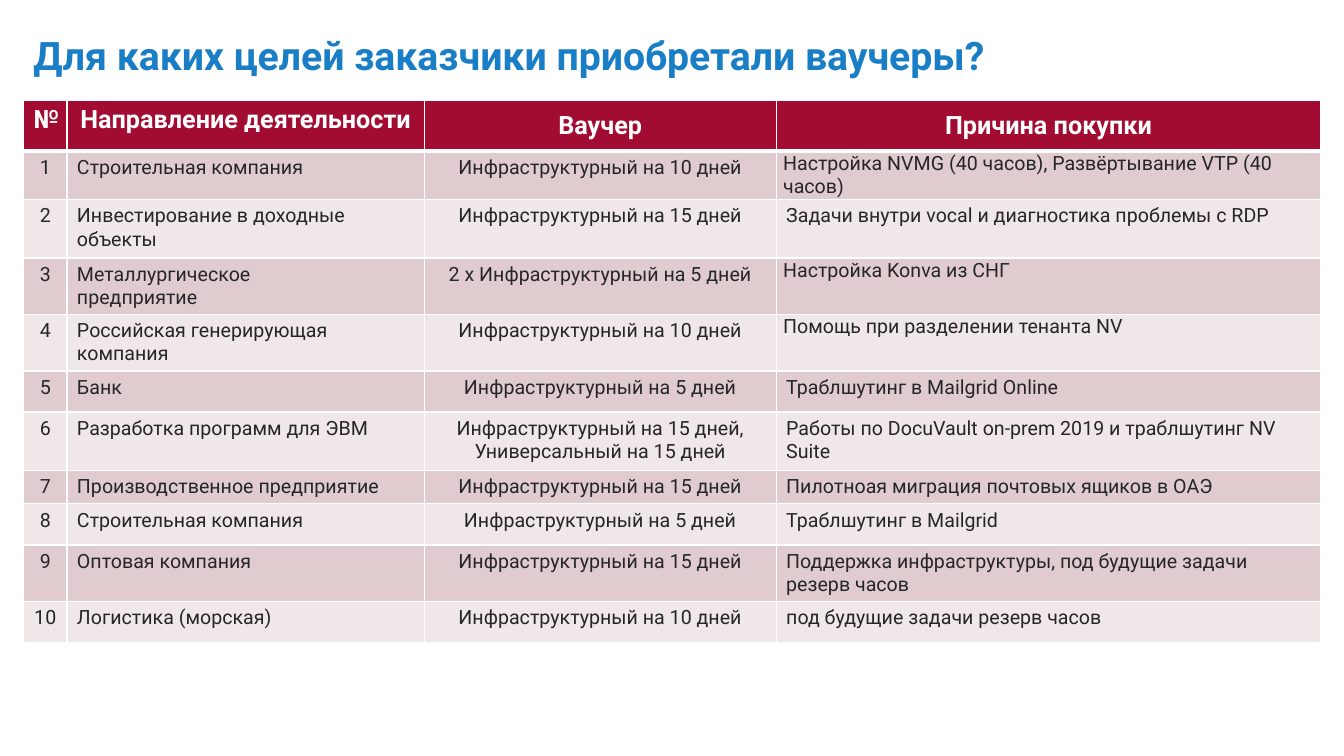
from dataclasses import dataclass

from lxml.etree import SubElement
from pptx import Presentation
from pptx.dml.color import RGBColor as Rgb
from pptx.enum.text import MSO_ANCHOR as Anchor, PP_ALIGN as Align
from pptx.oxml.ns import qn
from pptx.util import Pt


@dataclass(frozen=True)
class Theme:
    font: str = "Roboto"
    title_size: int = 28
    header_size: int = 18
    body_size: int = 14
    title_start: str = "0070C0"
    title_end: str = "A20C33"
    header_fill: str = "A20C33"
    bands: tuple = ("E0CCCE", "F0E7E8")
    white: str = "FFFFFF"
    ink: str = "262626"


class VoucherSlide:
    def __init__(self, deck, theme):
        self.theme = theme
        self.slide = deck.slides.add_slide(deck.slide_layouts[5])

    def style(self, frame, size, bold, color, align):
        for paragraph in frame.paragraphs:
            paragraph.alignment = align
            for run in paragraph.runs:
                run.font.name = self.theme.font
                run.font.size = Pt(size)
                run.font.bold = bold
                run.font.color.rgb = Rgb.from_string(color)

    def title(self, text, left, top, width, height):
        theme = self.theme
        heading = self.slide.shapes.title
        heading.left, heading.top = Pt(left), Pt(top)
        heading.width, heading.height = Pt(width), Pt(height)
        frame = heading.text_frame
        frame.text = text
        frame.word_wrap = True
        frame.vertical_anchor = Anchor.TOP
        self.style(frame, theme.title_size, True, theme.title_start, Align.LEFT)
        paragraph = frame.paragraphs[0]
        paragraph.line_spacing = 0.9
        gradient = paragraph.runs[0].font.fill
        gradient.gradient()
        gradient.gradient_angle = 225
        for stop, color in zip(gradient.gradient_stops, (theme.title_start, theme.title_end)):
            stop.color.rgb = Rgb.from_string(color)
        for tint in heading.element.iter(qn("a:srgbClr")):
            SubElement(tint, qn("a:alpha"), val="90000")

    def borders(self, cell, top, bottom):
        properties = cell._tc.get_or_add_tcPr()
        for side, width in (("L", 1), ("R", 1), ("T", top), ("B", bottom)):
            line = SubElement(properties, qn(f"a:ln{side}"), w=str(Pt(width)))
            fill = SubElement(line, qn("a:solidFill"))
            SubElement(fill, qn("a:srgbClr"), val=self.theme.white)

    def cell(self, cell, text, row, column):
        theme = self.theme
        header = row == 0
        cell.text_frame.text = text
        if header:
            self.style(cell.text_frame, theme.header_size, True, theme.white, Align.CENTER)
            cell.vertical_anchor = Anchor.MIDDLE if column > 1 else Anchor.TOP
        else:
            align = Align.CENTER if column in (0, 2) else Align.LEFT
            self.style(cell.text_frame, theme.body_size, False, theme.ink, align)
        self.borders(cell, 3 if row == 1 else 1, 3 if header else 1)
        cell.fill.solid()
        color = theme.header_fill if header else theme.bands[(row - 1) % 2]
        cell.fill.fore_color.rgb = Rgb.from_string(color)

    def table(self, rows, left, top, widths, heights, tight_rows):
        grid = self.slide.shapes.add_table(
            len(rows), len(widths), Pt(left), Pt(top), Pt(sum(widths)), Pt(sum(heights))
        ).table
        for column, width in zip(grid.columns, widths):
            column.width = Pt(width)
        for line, height in zip(grid.rows, heights):
            line.height = Pt(height)
        for row, texts in enumerate(rows):
            for column, text in enumerate(texts):
                self.cell(grid.cell(row, column), text, row, column)
        for row in tight_rows:
            reason = grid.cell(row, len(widths) - 1)
            reason.margin_left = reason.margin_right = Pt(5)
            reason.margin_top = reason.margin_bottom = Pt(0.7)


def infrastructure(days):
    return f"Инфраструктурный на {days} дней"


HEADER = ("№", "Направление деятельности", "Ваучер", "Причина покупки")
PURCHASES = (
    ("Строительная компания", infrastructure(10),
     "Настройка NVMG (40 часов), Развёртывание VTP (40 часов)"),
    ("Инвестирование в доходные объекты", infrastructure(15),
     "Задачи внутри vocal и диагностика проблемы с RDP"),
    ("Металлургическое\nпредприятие", f"2 х {infrastructure(5)}",
     "Настройка Konva из СНГ"),
    ("Российская генерирующая компания", infrastructure(10),
     "Помощь при разделении тенанта NV"),
    ("Банк", infrastructure(5), "Траблшутинг в Mailgrid Online"),
    ("Разработка программ для ЭВМ", f"{infrastructure(15)}, Универсальный на 15 дней",
     "Работы по DocuVault on-prem 2019 и траблшутинг NV Suite"),
    ("Производственное предприятие", infrastructure(15),
     "Пилотноая миграция почтовых ящиков в ОАЭ"),
    ("Строительная компания", infrastructure(5), "Траблшутинг в Mailgrid"),
    ("Оптовая компания", infrastructure(15),
     "Поддержка инфраструктуры, под будущие задачи резерв часов"),
    ("Логистика (морская)", infrastructure(10), "под будущие задачи резерв часов"),
)


def main():
    deck = Presentation()
    deck.slide_width, deck.slide_height = Pt(960), Pt(540)
    page = VoucherSlide(deck, Theme())
    page.title("Для каких целей заказчики приобретали ваучеры?", 16.6, 22.3, 753.8, 63.4)
    numbered = [(str(number), *purchase) for number, purchase in enumerate(PURCHASES, 1)]
    page.table(
        [HEADER, *numbered],
        left=16.9,
        top=71.4,
        widths=(30.9, 255.3, 251.3, 389.2),
        heights=(36.6, 34.2, 41.8, 40.2, 40.2, 29.4, 41.8, 23.8, 29.4, 40.2, 29.4),
        tight_rows=(1, 3, 4),
    )
    deck.save("out.pptx")


if __name__ == "__main__":
    main()
